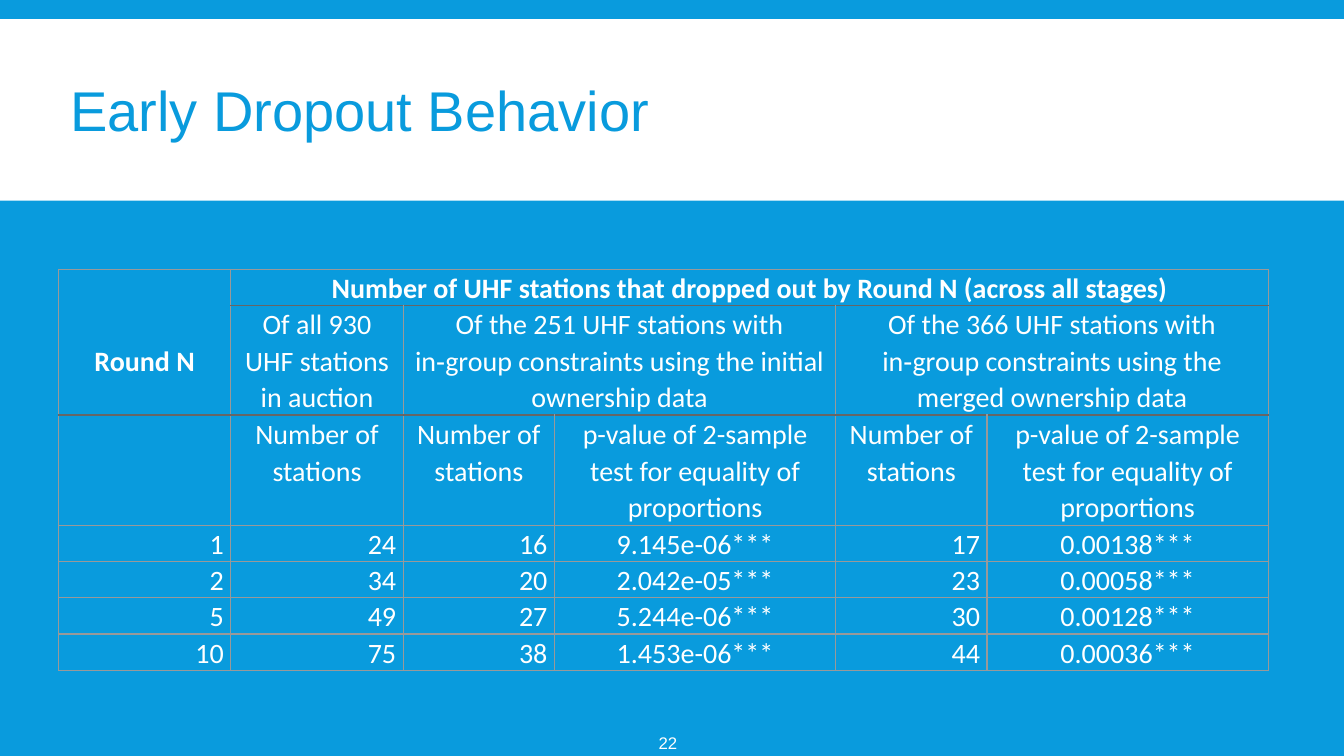
from dataclasses import dataclass

from lxml import etree
from pptx import Presentation
from pptx.dml.color import RGBColor
from pptx.enum import shapes, text
from pptx.oxml import ns
from pptx.util import Inches, Pt


@dataclass(frozen=True)
class Theme:
    blue: str = "099BDD"
    white: str = "FFFFFF"
    rule: str = "999999"
    header_rule: str = "666666"
    title_font: str = "Arial"
    table_font: str = "Calibri"
    title_size: int = 40
    table_size: int = 20
    number_size: int = 12


@dataclass(frozen=True)
class Label:
    content: str
    left: float
    top: float
    width: float
    height: float
    size: int
    color: str
    align: text.PP_ALIGN
    spacing: float
    inset: float


@dataclass(frozen=True)
class HeaderCell:
    content: str
    row: int
    column: int
    rows: int = 1
    columns: int = 1
    bold: bool = False


THEME = Theme()
LEFT, CENTER, RIGHT = text.PP_ALIGN.LEFT, text.PP_ALIGN.CENTER, text.PP_ALIGN.RIGHT

LABELS = [
    Label("Early Dropout Behavior", 0.6, 0.31, 11, 1.65, THEME.title_size, THEME.blue, LEFT, 0.85, 0.1),
    Label("22", 6.15, 7.17, 1, 0.4, THEME.number_size, THEME.white, CENTER, 1.0, 0.05),
]

COLUMN_WIDTHS = [1.71, 1.71, 1.5, 2.79, 1.5, 2.79]
ROW_HEIGHTS = [0.36, 1.09, 1.09, 0.36, 0.36, 0.36, 0.36]
HEADER_ROWS = 3
ROUND_LABEL_LIFT = 0.36
COUNT = "Number of stations"
P_VALUE = "p-value of 2-sample test for equality of proportions"
HEADERS = [
    HeaderCell("Round N", 0, 0, rows=2, bold=True),
    HeaderCell("Number of UHF stations that dropped out by Round N (across all stages)", 0, 1, columns=5, bold=True),
    HeaderCell("Of all 930 UHF stations in auction", 1, 1),
    HeaderCell("Of the 251 UHF stations with in‑group constraints using the initial ownership data", 1, 2, columns=2),
    HeaderCell("Of the 366 UHF stations with in‑group constraints using the merged ownership data", 1, 4, columns=2),
    *[HeaderCell(name, 2, column) for column, name in enumerate([COUNT, COUNT, P_VALUE, COUNT, P_VALUE], 1)],
]
ROUNDS = [
    ("1", "24", "16", "9.145e-06***", "17", "0.00138***"),
    ("2", "34", "20", "2.042e-05***", "23", "0.00058***"),
    ("5", "49", "27", "5.244e-06***", "30", "0.00128***"),
    ("10", "75", "38", "1.453e-06***", "44", "0.00036***"),
]


def apply(target, values: dict) -> None:
    for name, value in values.items():
        setattr(target, name, value)


def write(frame, content: str, font: str, size: int, color: str,
          align: text.PP_ALIGN, spacing: float, bold: bool = False) -> None:
    para = frame.paragraphs[0]
    apply(para, {"alignment": align, "line_spacing": spacing})
    span = para.add_run()
    span.text = content
    apply(span.font, {"name": font, "size": Pt(size), "bold": bold})
    span.font.color.rgb = RGBColor.from_string(color)


def draw_band(page) -> None:
    band = page.shapes.add_shape(shapes.MSO_SHAPE.RECTANGLE, Inches(0), Inches(0.19), Inches(13.33), Inches(1.8))
    band.shadow.inherit = False
    band.fill.solid()
    band.fill.fore_color.rgb = RGBColor.from_string(THEME.white)
    band.line.fill.background()


def draw_label(page, label: Label) -> None:
    box = page.shapes.add_textbox(*map(Inches, (label.left, label.top, label.width, label.height)))
    apply(box.text_frame, {
        "word_wrap": True,
        "vertical_anchor": text.MSO_ANCHOR.MIDDLE,
        "margin_left": Inches(label.inset),
        "margin_right": Inches(0.1),
    })
    write(box.text_frame, label.content, THEME.title_font, label.size, label.color, label.align, label.spacing)


def add_border(cell, side: str, color: str, width: float) -> None:
    line = etree.SubElement(cell._tc.get_or_add_tcPr(), ns.qn(f"a:{side}"), w=str(Pt(width)))
    fill = etree.SubElement(line, ns.qn("a:solidFill"))
    etree.SubElement(fill, ns.qn("a:srgbClr"), val=color)


def format_cell(cell, row: int) -> None:
    apply(cell, {
        "margin_left": Inches(0.07),
        "margin_right": Inches(0.07),
        "margin_top": 0,
        "margin_bottom": 0,
    })
    heavy, light = (THEME.header_rule, 1.5), (THEME.rule, 1)
    add_border(cell, "lnL", *light)
    add_border(cell, "lnR", *light)
    add_border(cell, "lnT", *(heavy if row in (1, 2) else light))
    add_border(cell, "lnB", *(heavy if row in (0, 1) else light))
    cell.fill.background()


def write_cell(cell, content: str, align: text.PP_ALIGN, bold: bool = False) -> None:
    write(cell.text_frame, content, THEME.table_font, THEME.table_size, THEME.white, align, 1.07, bold)


def draw_table(page) -> None:
    frame = page.shapes.add_table(
        len(ROW_HEIGHTS), len(COLUMN_WIDTHS), Inches(0.58), Inches(2.67),
        Inches(sum(COLUMN_WIDTHS)), Inches(sum(ROW_HEIGHTS)),
    )
    table = frame.table
    apply(table, {"first_row": False, "horz_banding": False})
    for column, width in zip(table.columns, COLUMN_WIDTHS):
        column.width = Inches(width)
    for index, height in enumerate(ROW_HEIGHTS):
        table.rows[index].height = Inches(height)
        for cell in table.rows[index].cells:
            format_cell(cell, index)
    for header in HEADERS:
        cell = table.cell(header.row, header.column)
        if header.rows * header.columns > 1:
            cell.merge(table.cell(header.row + header.rows - 1, header.column + header.columns - 1))
        write_cell(cell, header.content, CENTER, header.bold)
    apply(table.cell(0, 0), {
        "vertical_anchor": text.MSO_ANCHOR.BOTTOM,
        "margin_bottom": Inches(ROUND_LABEL_LIFT),
    })
    for row, values in enumerate(ROUNDS, HEADER_ROWS):
        for column, value in enumerate(values):
            write_cell(table.cell(row, column), value, CENTER if value.endswith("*") else RIGHT)


def main() -> None:
    deck = Presentation()
    apply(deck, {"slide_width": Inches(13.33), "slide_height": Inches(7.5)})
    page = deck.slides.add_slide(deck.slide_layouts[6])
    page.background.fill.solid()
    page.background.fill.fore_color.rgb = RGBColor.from_string(THEME.blue)
    draw_band(page)
    for label in LABELS:
        draw_label(page, label)
    draw_table(page)
    deck.save("out.pptx")


if __name__ == "__main__":
    main()
